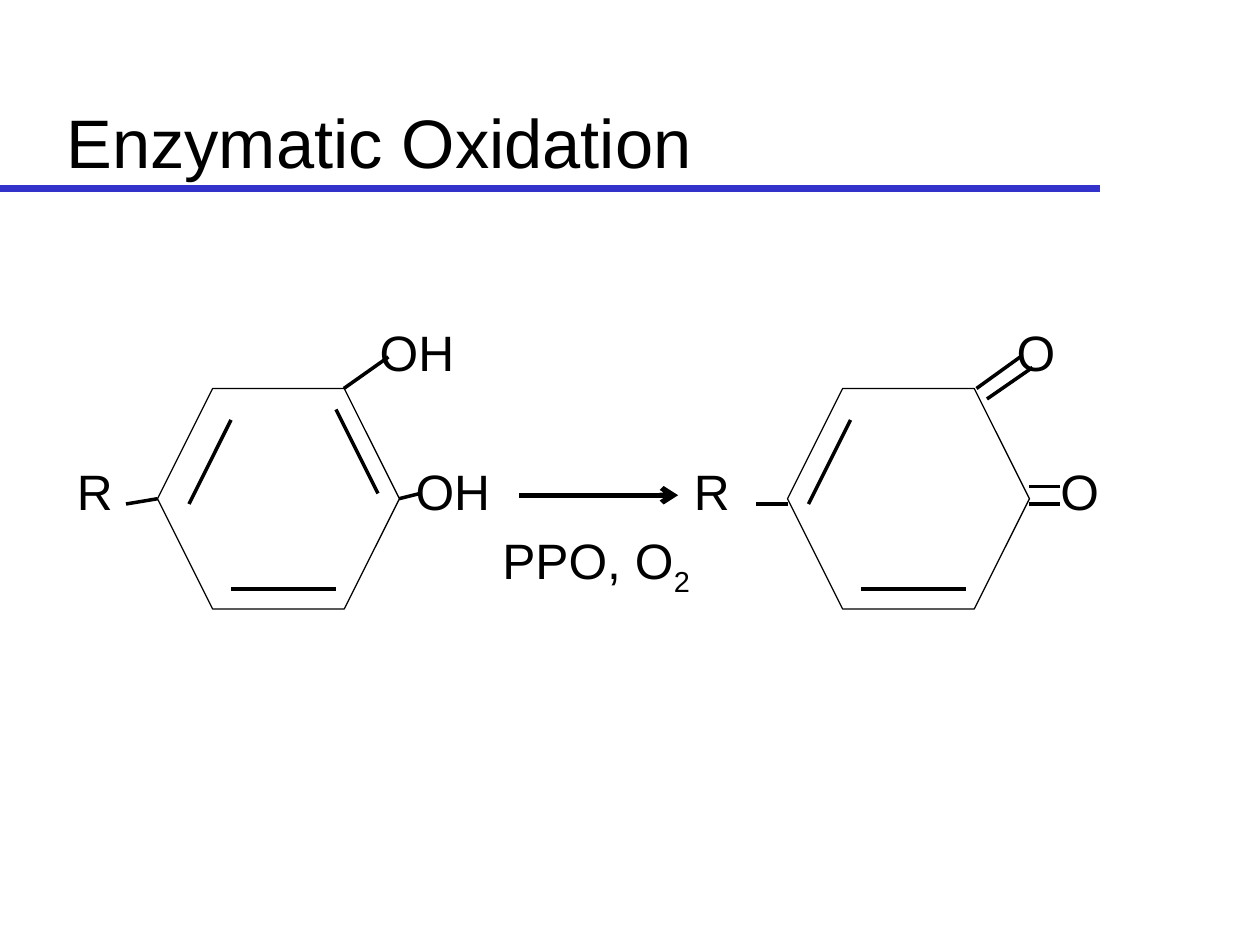
from dataclasses import dataclass

from lxml.etree import SubElement
from pptx import Presentation
from pptx.dml.color import RGBColor
from pptx.enum.shapes import MSO_CONNECTOR, MSO_SHAPE
from pptx.enum.text import MSO_ANCHOR
from pptx.oxml.ns import qn
from pptx.util import Pt


@dataclass(frozen=True)
class Theme:
    """Colours, font, type sizes and line widths of the slide."""
    ink: RGBColor = RGBColor(0, 0, 0)
    paper: RGBColor = RGBColor(255, 255, 255)
    accent: RGBColor = RGBColor(0x33, 0x33, 0xCC)
    font: str = "Arial"
    title_size: float = 39.2
    label_size: float = 28.4
    outline: float = 0.75
    bond: float = 2
    arrow: float = 3
    rule: float = 4


THEME = Theme()
RING_WIDTH, RING_HEIGHT, RING_TOP = 138.24, 126, 222
LABEL_HEIGHT = 33
INNER_BOTTOM = (102, 114.5, 42, 114.5)

CATECHOL = {
    "bonds": [
        (-18, 66, 0, 63), (106.5, 0, 132, -18), (138, 63, 150, 60),
        (42, 18, 18, 66), (102, 12, 126, 60), INNER_BOTTOM,
    ],
    "labels": [("R", -46, 41.5), ("OH", 127, -38), ("OH", 147.5, 41.5)],
}
QUINONE = {
    "bonds": [
        (0, 66, -18, 66), (114, 6, 140, -12), (108, 0, 133, -18),
        (156, 66, 138, 66), (156, 56, 138, 56),
        (36, 18, 12, 66), INNER_BOTTOM,
    ],
    "labels": [("R", -53.5, 41.5), ("O", 131, -38), ("O", 156, 41.5)],
}


def format_span(span, size):
    """Give a run the theme's font and colour at the given size."""
    span.font.name = THEME.font
    span.font.size = Pt(size)
    span.font.color.rgb = THEME.ink


def add_text(page, text, box, size, anchor=MSO_ANCHOR.TOP, wrap=False):
    """Place one line of text in a box without margins and return its paragraph."""
    frame = page.shapes.add_textbox(*map(Pt, box)).text_frame
    frame.margin_left = frame.margin_right = frame.margin_top = frame.margin_bottom = 0
    frame.word_wrap = wrap
    frame.vertical_anchor = anchor
    frame.text = text
    para = frame.paragraphs[0]
    format_span(para.runs[0], size)
    return para


def add_line(page, ends, width, color=THEME.ink):
    """Draw a straight line without a shadow."""
    line = page.shapes.add_connector(MSO_CONNECTOR.STRAIGHT, *map(Pt, ends))
    line.line.width = Pt(width)
    line.line.color.rgb = color
    SubElement(line.element.spPr, qn("a:effectLst"))
    return line


def add_heading(page, box):
    """Place the title and the rule that runs under it from the slide's edge."""
    left, top, width, height = box
    title_box = (left + 8, top, width - 16, height - 4)
    add_text(page, "Enzymatic Oxidation", title_box, THEME.title_size,
             MSO_ANCHOR.BOTTOM, wrap=True)
    rule_y = top + height - 0.5
    add_line(page, (0, rule_y, 628.5, rule_y), THEME.rule, THEME.accent)


def add_molecule(page, box, molecule):
    """Draw a six-sided ring with its bonds and atom labels."""
    left, top, width, height = box
    ring = page.shapes.add_shape(MSO_SHAPE.HEXAGON, *map(Pt, box))
    ring.shadow.inherit = False
    ring.adjustments[0] = 0.25
    ring.fill.solid()
    ring.fill.fore_color.rgb = THEME.paper
    ring.line.color.rgb = THEME.ink
    ring.line.width = Pt(THEME.outline)
    for x1, y1, x2, y2 in molecule["bonds"]:
        add_line(page, (left + x1, top + y1, left + x2, top + y2), THEME.bond)
    for text, x, y in molecule["labels"]:
        label_box = (left + x, top + y, 22.5 * len(text), LABEL_HEIGHT)
        add_text(page, text, label_box, THEME.label_size)


def add_reaction(page, box):
    """Draw the reaction arrow with the enzyme and oxygen beneath it."""
    left, top, width, height = box
    arrow = add_line(page, (left + 9.5, top, left + 100.5, top), THEME.arrow)
    SubElement(arrow.line._get_or_add_ln(), qn("a:tailEnd"), type="arrow")
    label_box = (left, top + height - LABEL_HEIGHT, width, LABEL_HEIGHT)
    para = add_text(page, "PPO, O", label_box, THEME.label_size)
    subscript = para.add_run()
    subscript.text = "2"
    format_span(subscript, THEME.label_size)
    subscript.font._element.set("baseline", "-25000")


def main():
    """Build and save the slide."""
    deck = Presentation()
    deck.slide_width, deck.slide_height = Pt(720), Pt(540)
    page = deck.slides.add_slide(deck.slide_layouts[6])
    add_heading(page, (30, 21, 612, 87))
    for left, molecule in ((90, CATECHOL), (450, QUINONE)):
        add_molecule(page, (left, RING_TOP, RING_WIDTH, RING_HEIGHT), molecule)
    add_reaction(page, (287, 283, 110, 53))
    deck.save("out.pptx")


if __name__ == "__main__":
    main()
